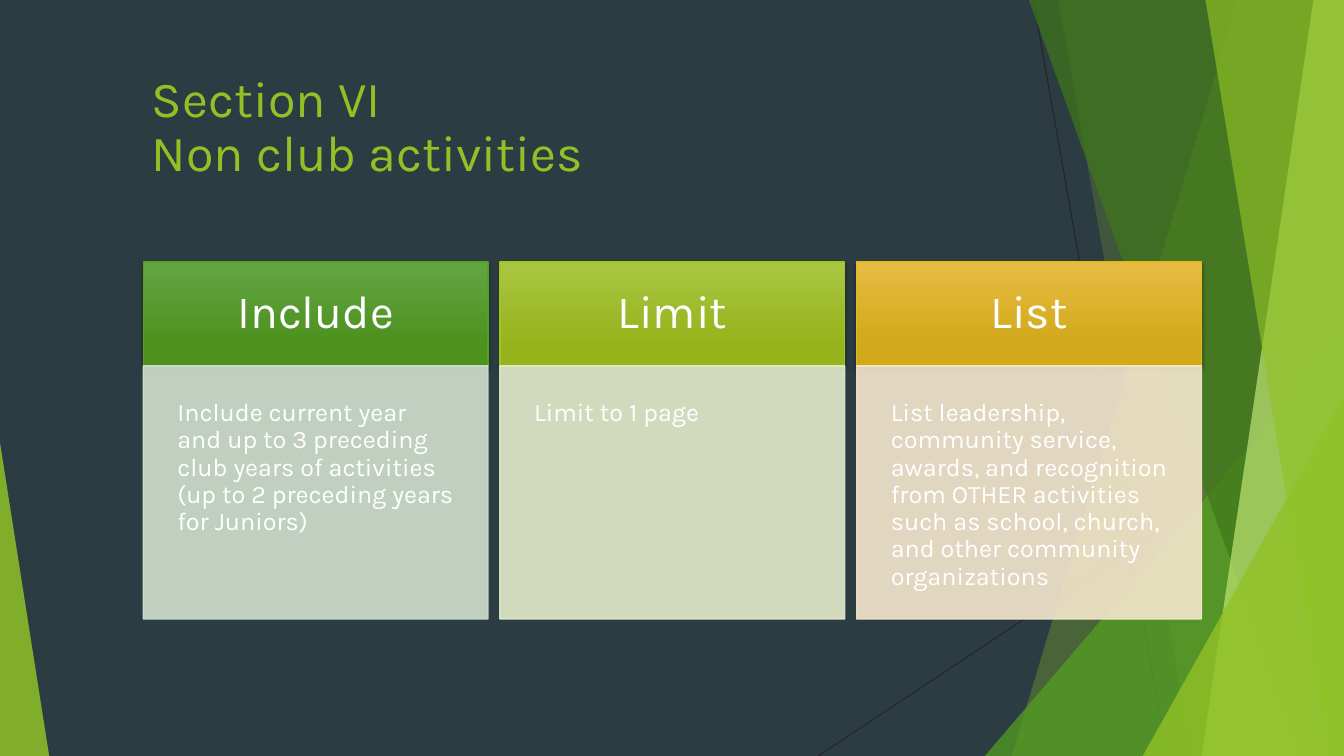
from dataclasses import dataclass

from lxml.etree import SubElement
from pptx import Presentation
from pptx.dml.color import RGBColor
from pptx.enum.shapes import MSO_CONNECTOR, MSO_SHAPE
from pptx.enum.text import MSO_ANCHOR, PP_ALIGN
from pptx.oxml.ns import qn
from pptx.util import Cm, Pt


@dataclass(frozen=True)
class Theme:
    font: str = "Karla"
    background: str = "2C3C43"
    hairline: str = "262626"
    lime: str = "90C226"
    pale_lime: str = "C0E474"
    green: str = "54A021"
    dark_green: str = "3F7819"
    white: str = "FFFFFF"
    title_size: int = 36
    heading_size: int = 33
    body_size: int = 18
    include: tuple = ("63A545", "4D921E", "54A021", "D1DFCD")
    limit: tuple = ("AAC744", "97B31C", "A5C41F", "E5ECCB")
    list: tuple = ("E7BC43", "D2A91B", "E6B91E", "F5E7CD")


def paint(fill, color, opacity=100):
    fill.solid()
    fill.fore_color.rgb = RGBColor.from_string(color)
    if opacity < 100:
        color_element = fill._xPr.find(qn("a:solidFill"))[0]
        SubElement(color_element, qn("a:alpha"), val=str(opacity * 1000))


def write(shape, lines, size, color, inset, anchor, align):
    frame = shape.text_frame
    frame.word_wrap = True
    frame.vertical_anchor = anchor
    frame.margin_left = frame.margin_right = Cm(inset[0])
    frame.margin_top = frame.margin_bottom = Cm(inset[1])
    paragraph = frame.paragraphs[0]
    paragraph.alignment = align
    paragraph.line_spacing = 0.9
    for index, line in enumerate(lines):
        if index:
            paragraph.add_line_break()
        run = paragraph.add_run()
        run.text = line
        run.font.name = theme.font
        run.font.size = Pt(size)
        run.font.color.rgb = RGBColor.from_string(color)


theme = Theme()
WIDTH, HEIGHT = 33.87, 19.05

presentation = Presentation()
presentation.slide_width = Cm(WIDTH)
presentation.slide_height = Cm(HEIGHT)
slide = presentation.slides.add_slide(presentation.slide_layouts[6])
paint(slide.background.fill, theme.background)
shapes = slide.shapes

for ends in [(26.04, 0, 29.41, HEIGHT), (WIDTH, 10.24, 20.62, HEIGHT)]:
    hairline = shapes.add_connector(MSO_CONNECTOR.STRAIGHT, *map(Cm, ends))
    paint(hairline.line.fill, theme.hairline)
    hairline.line.width = Pt(0.75)
    SubElement(hairline._element.spPr, qn("a:effectLst"))

facets = [
    ("band", (31.19, 25.5), theme.lime, 30),
    ("band", (26.67, 30.05), theme.lime, 20),
    ("triangle", (24.82, 8.46, WIDTH, 1), theme.green, 72),
    ("band", (25.93, 32.79), theme.dark_green, 70),
    ("band", (33.1, 30.28), theme.pale_lime, 70),
    ("band", (30.38, 33.48), theme.lime, 65),
    ("triangle", (28.8, 9.98, WIDTH, 1), theme.lime, 80),
    ("triangle", (0, 11.15, 1.24, 0), theme.lime, 85),
]
for kind, geometry, color, opacity in facets:
    if kind == "band":
        top_x, bottom_x = geometry
        builder = shapes.build_freeform(Cm(top_x), 0)
        corners = [(WIDTH, 0), (WIDTH, HEIGHT), (bottom_x, HEIGHT)]
        builder.add_line_segments([(Cm(x), Cm(y)) for x, y in corners])
        facet = builder.convert_to_shape()
    else:
        left, top, right, apex = geometry
        facet = shapes.add_shape(
            MSO_SHAPE.ISOSCELES_TRIANGLE,
            Cm(left), Cm(top), Cm(right - left), Cm(HEIGHT - top),
        )
        facet.adjustments[0] = apex
    paint(facet.fill, color, opacity)
    facet.line.fill.background()
    facet.shadow.inherit = False

title = shapes.add_textbox(Cm(3.58), Cm(1.7), Cm(28.32), Cm(3.05))
write(title, ["Section VI", "Non club activities"], theme.title_size, theme.lime,
      (0.25, 0.13), MSO_ANCHOR.MIDDLE, PP_ALIGN.LEFT)

CARD_LEFT, CARD_TOP, CARD_WIDTH, CARD_STEP = 3.61, 6.6, 8.69, 8.99
HEADING_HEIGHT, BODY_HEIGHT = 2.62, 6.38
cards = [
    ("Include", theme.include,
     "Include current year and up to 3 preceding club years of activities "
     "(up to 2 preceding years for Juniors)"),
    ("Limit", theme.limit, "Limit to 1 page"),
    ("List", theme.list,
     "List leadership, community service, awards, and recognition from OTHER "
     "activities such as school, church, and other community organizations"),
]
for index, (heading_text, colors, body_text) in enumerate(cards):
    light, deep, edge, pale = colors
    left = Cm(CARD_LEFT + index * CARD_STEP)

    heading = shapes.add_shape(
        MSO_SHAPE.RECTANGLE, left, Cm(CARD_TOP), Cm(CARD_WIDTH), Cm(HEADING_HEIGHT))
    heading.fill.gradient()
    heading.fill.gradient_angle = 270
    for stop, color, position in zip(heading.fill.gradient_stops, (light, deep), (0, 0.78)):
        stop.color.rgb = RGBColor.from_string(color)
        stop.position = position
    paint(heading.line.fill, edge)
    heading.line.width = Pt(1)
    heading.shadow.inherit = False
    effects = heading._element.spPr.find(qn("a:effectLst"))
    shadow = SubElement(effects, qn("a:outerShdw"), blurRad=str(Pt(3)), dist=str(Pt(2)),
                        dir="5400000", rotWithShape="0")
    shadow_color = SubElement(shadow, qn("a:srgbClr"), val="000000")
    SubElement(shadow_color, qn("a:alpha"), val="35000")
    write(heading, [heading_text], theme.heading_size, theme.white,
          (0.69, 0.69), MSO_ANCHOR.MIDDLE, PP_ALIGN.CENTER)

    body = shapes.add_shape(
        MSO_SHAPE.RECTANGLE, left, Cm(CARD_TOP + HEADING_HEIGHT),
        Cm(CARD_WIDTH), Cm(BODY_HEIGHT))
    paint(body.fill, pale, 90)
    paint(body.line.fill, pale, 90)
    body.line.width = Pt(1)
    body.shadow.inherit = False
    write(body, [body_text], theme.body_size, theme.white,
          (0.86, 0.86), MSO_ANCHOR.TOP, PP_ALIGN.LEFT)

presentation.save("out.pptx")
